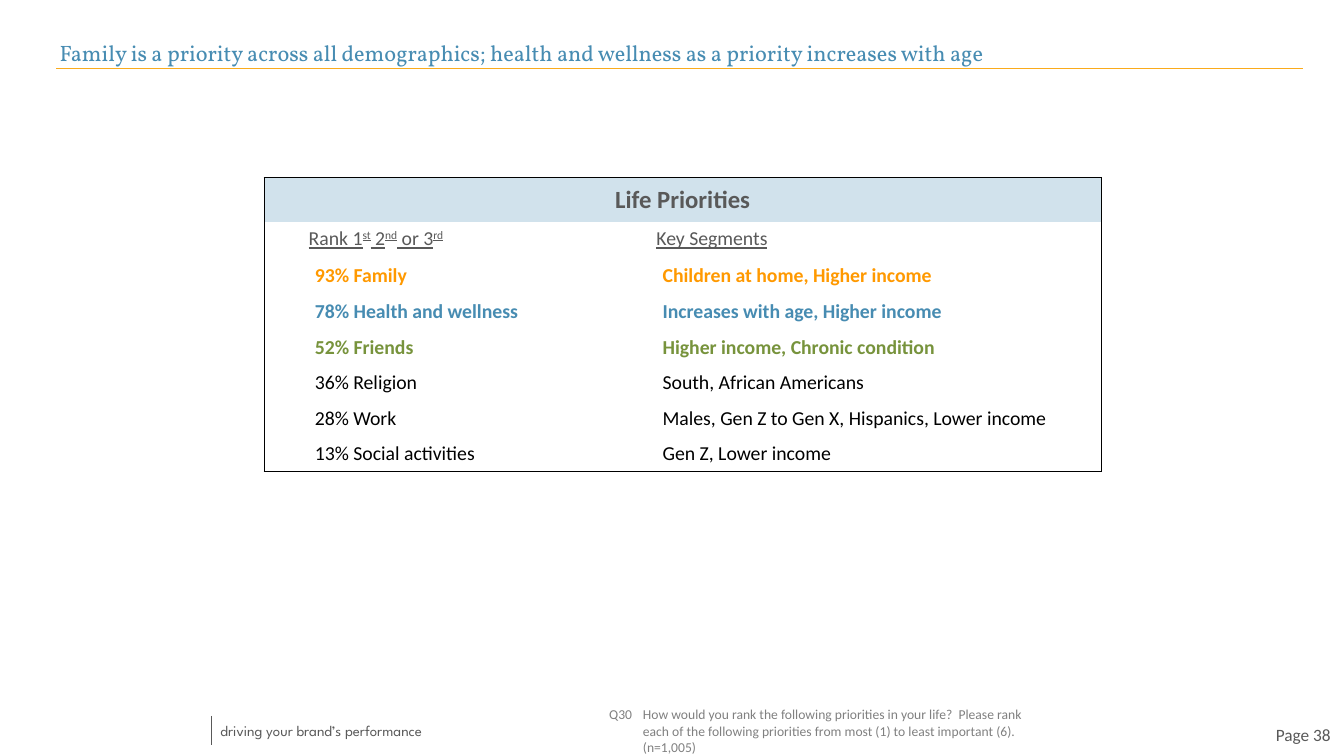
from lxml.etree import SubElement
from pptx import Presentation
from pptx.dml.color import RGBColor
from pptx.enum.shapes import MSO_CONNECTOR
from pptx.enum.text import MSO_ANCHOR, MSO_AUTO_SIZE, PP_ALIGN
from pptx.oxml.ns import qn
from pptx.util import Inches, Pt

BLUE, GREY, BLACK = "478CB2", "595959", "000000"
NO_STYLE = "{2D5ABB26-0587-4C30-8999-92F81FD0307C}"
PRIORITIES = [
    ("93% Family", "Children at home, Higher income", "FF9900"),
    ("78% Health and wellness", "Increases with age, Higher income", BLUE),
    ("52% Friends", "Higher income, Chronic condition", "77933C"),
    ("36% Religion", "South, African Americans", BLACK),
    ("28% Work", "Males, Gen Z to Gen X, Hispanics, Lower income", BLACK),
    ("13% Social activities", "Gen Z, Lower income", BLACK),
]
RANK_HEADING = [("Rank 1", 0), ("st", 30), (" 2", 0), ("nd", 30), (" or 3", 0), ("rd", 30)]
QUESTION = (
    "Q30\tHow would you rank the following priorities in your life?  Please rank each of "
    "the following priorities from most (1) to least important (6).  (n=1,005)"
)


def color(hex_string):
    return RGBColor.from_string(hex_string)


class SlideBuilder:
    font = "Calibri"

    def __init__(self, slide):
        self.slide = slide

    def run(self, paragraph, text, size, fill, font=None, bold=False, underline=False, raised=0):
        run = paragraph.add_run()
        run.text = text
        run.font.name = font or self.font
        run.font.size = Pt(size)
        run.font.bold = bold
        run.font.underline = underline
        run.font.color.rgb = color(fill)
        if raised:
            run._r.get_or_add_rPr().set("baseline", str(raised * 1000))

    def indent(self, paragraph, left, first=0):
        properties = paragraph._p.get_or_add_pPr()
        properties.set("marL", str(Inches(left)))
        properties.set("indent", str(Inches(first)))

    def place(self, shape, left, top, width, height):
        shape.left, shape.top = Inches(left), Inches(top)
        shape.width, shape.height = Inches(width), Inches(height)

    def title(self, text, box, size, fill, font):
        shape = self.slide.shapes.title
        self.place(shape, *box)
        frame = shape.text_frame
        frame.auto_size = MSO_AUTO_SIZE.NONE
        frame.vertical_anchor = MSO_ANCHOR.MIDDLE
        frame.margin_left = frame.margin_right = Inches(0.11)
        frame.margin_top = frame.margin_bottom = Inches(0.06)
        paragraph = frame.paragraphs[0]
        paragraph.alignment = PP_ALIGN.LEFT
        self.run(paragraph, text, size, fill, font)

    def text(self, text, box, size, fill, font=None, wrap=True, align=PP_ALIGN.LEFT,
             anchor=MSO_ANCHOR.TOP):
        frame = self.slide.shapes.add_textbox(*map(Inches, box)).text_frame
        frame.word_wrap = wrap
        frame.vertical_anchor = anchor
        paragraph = frame.paragraphs[0]
        paragraph.alignment = align
        self.run(paragraph, text, size, fill, font)
        return paragraph

    def line(self, start, end, fill, width):
        connector = self.slide.shapes.add_connector(
            MSO_CONNECTOR.STRAIGHT, *map(Inches, start + end))
        connector.line.color.rgb = color(fill)
        connector.line.width = Pt(width)
        SubElement(connector._element.spPr, qn("a:effectLst"))

    def table(self, left, top, columns, rows):
        frame = self.slide.shapes.add_table(
            len(rows), len(columns), Inches(left), Inches(top),
            Inches(sum(columns)), Inches(sum(rows)))
        table = frame.table
        table.first_row = table.horz_banding = False
        table._tbl.tblPr.find(qn("a:tableStyleId")).text = NO_STYLE
        for column, width in zip(table.columns, columns):
            column.width = Inches(width)
        for row, height in zip(table.rows, rows):
            row.height = Inches(height)
        return table

    def margins(self, cell, side, top, bottom):
        cell.margin_left = cell.margin_right = Inches(side)
        cell.margin_top, cell.margin_bottom = Inches(top), Inches(bottom)

    def border(self, cell, edge):
        line = SubElement(cell._tc.get_or_add_tcPr(), qn(f"a:ln{edge}"), w=str(Pt(1)))
        SubElement(SubElement(line, qn("a:solidFill")), qn("a:srgbClr"), val=BLACK)

    def outline(self, table):
        last_row, last_column = len(table.rows) - 1, len(table.columns) - 1
        for row in range(last_row + 1):
            for column in range(last_column + 1):
                cell = table.cell(row, column)
                end = column + (cell.span_width if cell.is_merge_origin else 1) - 1
                edges = {"L": column == 0, "R": end == last_column,
                         "T": row == 0, "B": row == last_row}
                for edge, outer in edges.items():
                    if outer:
                        self.border(cell, edge)
                cell.fill.background()


def add_priorities(builder):
    table = builder.table(2.97, 2, [3.2, 0.71, 4.9, 0.6], [0.5] + [0.4] * 7)
    for row, first, last in [(0, 0, 3), (1, 0, 1), (1, 2, 3)]:
        table.cell(row, first).merge(table.cell(row, last))
    builder.outline(table)

    heading = table.cell(0, 0)
    heading.fill.solid()
    heading.fill.fore_color.rgb = color("D1E2EC")
    heading.vertical_anchor = MSO_ANCHOR.MIDDLE
    paragraph = heading.text_frame.paragraphs[0]
    paragraph.alignment = PP_ALIGN.CENTER
    builder.run(paragraph, "Life Priorities", 20, GREY, bold=True)

    for column, parts in [(0, RANK_HEADING), (2, [("Key Segments", 0)])]:
        paragraph = table.cell(1, column).text_frame.paragraphs[0]
        builder.indent(paragraph, 0.4)
        for text, raised in parts:
            builder.run(paragraph, text, 16, GREY, underline=True, raised=raised)

    for row, (priority, segments, fill) in enumerate(PRIORITIES, 2):
        for column, text in enumerate([priority, "", segments, ""]):
            cell = table.cell(row, column)
            builder.margins(cell, 0.01, 0.01, 0)
            cell.vertical_anchor = MSO_ANCHOR.MIDDLE
            if text:
                paragraph = cell.text_frame.paragraphs[0]
                builder.indent(paragraph, 0.56)
                builder.run(paragraph, text, 16, fill, bold=fill != BLACK)


def main():
    presentation = Presentation()
    presentation.slide_width, presentation.slide_height = Inches(15.11), Inches(8.5)
    builder = SlideBuilder(presentation.slides.add_slide(presentation.slide_layouts[5]))

    builder.line((0.63, 0.77), (14.65, 0.77), "FAAB1C", 1)
    builder.text("driving your brand’s performance", (2.38, 8.06, 2.95, 0.3), 12, GREY,
                 font="League Spartan", wrap=False)
    builder.line((2.38, 8.05), (2.38, 8.38), GREY, 0.75)
    builder.title("Family is a priority across all demographics; "
                  "health and wellness as a priority increases with age",
                  (0.56, 0.37, 14.08, 0.45), 18, BLUE, "Vollkorn")
    add_priorities(builder)
    question = builder.text(QUESTION, (6.75, 7.89, 5.14, 0.47), 11, "808080")
    builder.indent(question, 0.38, -0.38)
    builder.text("Page 38", (13.75, 8.1, 1.31, 0.33), 14, GREY,
                 align=PP_ALIGN.RIGHT, anchor=MSO_ANCHOR.MIDDLE)
    presentation.save("out.pptx")


if __name__ == "__main__":
    main()
